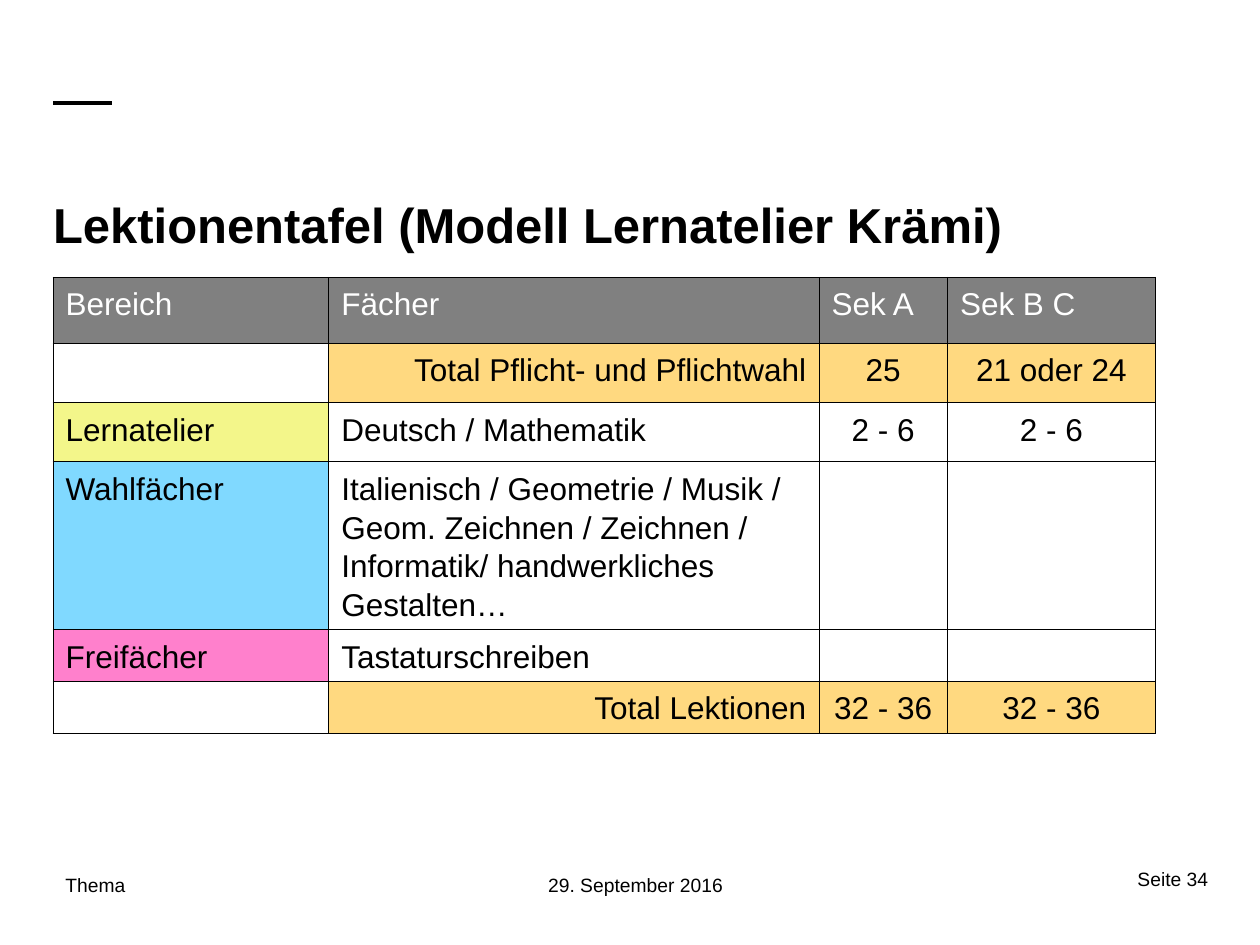
import pptx
import pptx.util
import pptx.dml.color
import pptx.enum.shapes
import pptx.enum.text
import pptx.oxml

Cm = pptx.util.Cm
Pt = pptx.util.Pt
RGBColor = pptx.dml.color.RGBColor
ALIGN = pptx.enum.text.PP_ALIGN
ANCHOR = pptx.enum.text.MSO_ANCHOR

BLACK = RGBColor(0x00, 0x00, 0x00)
WHITE = RGBColor(0xFF, 0xFF, 0xFF)
GREY = RGBColor(0x80, 0x80, 0x80)
ORANGE = RGBColor(0xFF, 0xD9, 0x80)
YELLOW = RGBColor(0xF3, 0xF6, 0x8A)
BLUE = RGBColor(0x80, 0xD9, 0xFF)
PINK = RGBColor(0xFF, 0x80, 0xCC)

TITLE = "Lektionentafel (Modell Lernatelier Krämi)"
LEFT = 1.07
FOOTERS = [
    ("Thema", LEFT, 8.05),
    ("29. September 2016", 10.8, 5.28),
]
PAGE = "Seite 34"

COL_WIDTHS = [5.56, 9.88, 2.59, 4.19]
HEADER = ["Bereich", "Fächer", "Sek A", "Sek B C"]
ELECTIVES = ("Italienisch / Geometrie / Musik /\vGeom. Zeichnen / Zeichnen / "
             "Informatik/ handwerkliches Gestalten…")
ROWS = [
    (1.33, HEADER, [GREY] * 4),
    (1.2, ["", "Total Pflicht- und Pflichtwahl", "25", "21 oder 24"], [None] + [ORANGE] * 3),
    (1.19, ["Lernatelier", "Deutsch / Mathematik", "2 - 6", "2 - 6"], [YELLOW] + [None] * 3),
    (3.38, ["Wahlfächer", ELECTIVES, "", ""], [BLUE] + [None] * 3),
    (1.03, ["Freifächer", "Tastaturschreiben", "", ""], [PINK] + [None] * 3),
    (1.05, ["", "Total Lektionen", "32 - 36", "32 - 36"], [None] + [ORANGE] * 3),
]


def write(tf, text, size=18, color=BLACK, bold=False, align=ALIGN.LEFT, spacing=None):
    p = tf.paragraphs[0]
    p.text = text
    p.alignment = align
    p.line_spacing = spacing
    for r in p.runs:
        r.font.name = "Arial"
        r.font.size = Pt(size)
        r.font.bold = bold
        r.font.color.rgb = color


def set_frame(tf, margin_x=0.0, margin_y=0.0):
    tf.word_wrap = True
    tf.auto_size = pptx.enum.text.MSO_AUTO_SIZE.NONE
    tf.margin_left = tf.margin_right = Cm(margin_x)
    tf.margin_top = tf.margin_bottom = Cm(margin_y)


def set_borders(cell, width=0.5):
    ns = "http://schemas.openxmlformats.org/drawingml/2006/main"
    tc_pr = cell._tc.get_or_add_tcPr()
    for i, side in enumerate(["lnL", "lnR", "lnT", "lnB"]):
        tc_pr.insert(i, pptx.oxml.parse_xml(
            f'<a:{side} xmlns:a="{ns}" w="{Pt(width)}"><a:solidFill>'
            f'<a:srgbClr val="{BLACK}"/></a:solidFill></a:{side}>'))


def cell_align(row, col, text):
    if row == 0:
        return ALIGN.LEFT
    if col > 1:
        return ALIGN.CENTER
    return ALIGN.RIGHT if text.startswith("Total") else ALIGN.LEFT


def add_rule(s):
    line = s.shapes.add_connector(pptx.enum.shapes.MSO_CONNECTOR.STRAIGHT,
                                  Cm(LEFT), Cm(2.08), Cm(2.26), Cm(2.08))
    line.line.color.rgb = BLACK
    line.line.width = Pt(2.27)
    line._element.spPr.append(pptx.oxml.parse_xml(
        '<a:effectLst xmlns:a="http://schemas.openxmlformats.org/drawingml/2006/main"/>'))


def add_lesson_table(s):
    frame = s.shapes.add_table(len(ROWS), len(COL_WIDTHS), Cm(LEFT), Cm(5.59),
                               Cm(sum(COL_WIDTHS)), Cm(sum(row[0] for row in ROWS)))
    table = frame.table
    table.first_row = table.horz_banding = False
    for column, width in zip(table.columns, COL_WIDTHS):
        column.width = Cm(width)
    for i, (height, texts, fills) in enumerate(ROWS):
        table.rows[i].height = Cm(height)
        for j, (text, fill) in enumerate(zip(texts, fills)):
            cell = table.cell(i, j)
            write(cell.text_frame, text, color=BLACK if i else WHITE,
                  align=cell_align(i, j, text), spacing=1.1)
            if fill is None:
                cell.fill.background()
            else:
                cell.fill.solid()
                cell.fill.fore_color.rgb = fill
            set_borders(cell)


def main():
    prs = pptx.Presentation()
    prs.slide_width, prs.slide_height = Cm(25.4), Cm(19.05)
    s = prs.slides.add_slide(prs.slide_layouts[5])
    add_rule(s)

    title = s.shapes.title
    title.left, title.top, title.width, title.height = Cm(LEFT), Cm(2.11), Cm(23.29), Cm(3)
    set_frame(title.text_frame)
    title.text_frame.vertical_anchor = ANCHOR.BOTTOM
    write(title.text_frame, TITLE, size=28, bold=True)

    for text, left, width in FOOTERS:
        sp = s.shapes.add_textbox(Cm(left), Cm(17.48), Cm(width), Cm(1.27))
        set_frame(sp.text_frame, 0.25, 0.13)
        write(sp.text_frame, text, size=11)
    sp = s.shapes.add_textbox(Cm(18.85), Cm(17.48), Cm(5.51), Cm(1.57))
    set_frame(sp.text_frame)
    write(sp.text_frame, PAGE, size=11, align=ALIGN.RIGHT)

    add_lesson_table(s)
    prs.save("out.pptx")


if __name__ == "__main__":
    main()
